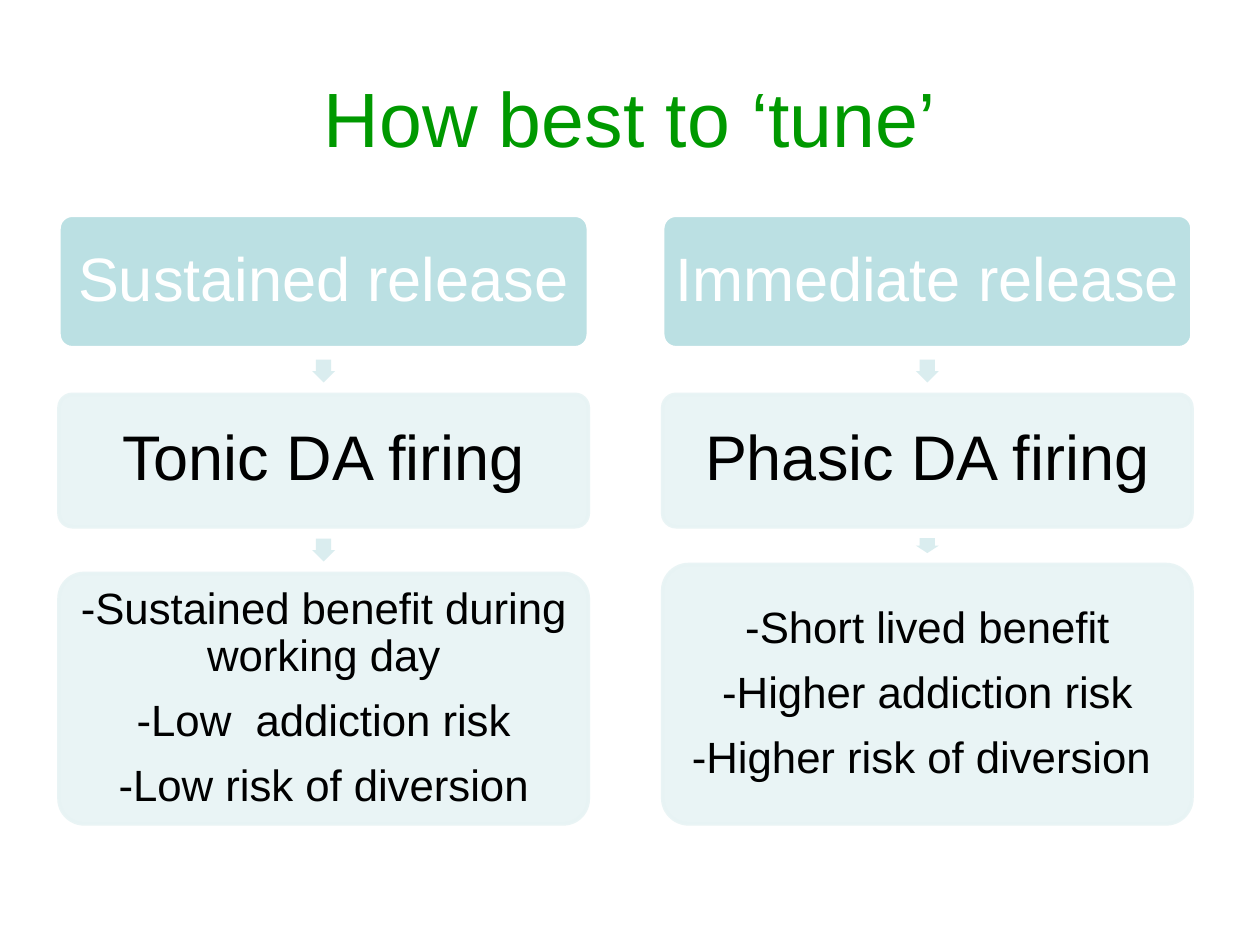
from lxml.etree import SubElement
from pptx import Presentation
from pptx.dml.color import RGBColor
from pptx.enum.shapes import MSO_SHAPE
from pptx.enum.text import MSO_ANCHOR, PP_ALIGN
from pptx.oxml.ns import qn
from pptx.util import Cm, Pt

# Content: each column holds its left edge and its boxes from top to bottom
TITLE = "How best to ‘tune’"
COLS = [
    (1.19, [["Sustained release"], ["Tonic DA firing"],
            ["-Sustained benefit during working day", "-Low  addiction risk",
             "-Low risk of diversion"]]),
    (13.36, [["Immediate release"], ["Phasic DA firing"],
             ["-Short lived benefit", "-Higher addiction risk",
              "-Higher risk of diversion "]]),
]
# Per row: fill, line, opacity, text colour, text size, inset
ROWS = [
    ("BBE0E3", "FFFFFF", 100, "FFFFFF", 35, 0.13),
    ("E7F3F4", "E7F3F4", 90, "000000", 36, 0.13),
    ("E7F3F4", "E7F3F4", 90, "000000", 25, 0.08),
]
# Per column: top of each box, height of each arrow
TOPS = [(4.34, 7.95, 11.56), (4.34, 7.95, 11.38)]
TIPS = [(0.46, 0.46), (0.46, 0.3)]
WIDE, HIGH, BASE, TIP = 10.67, 2.67, 16.61, 0.46


def tint(paint, code, alpha=100):
    paint.solid()
    paint.fore_color.rgb = RGBColor.from_string(code)
    if alpha < 100:
        node = paint._xPr.find(qn("a:solidFill"))[0]
        SubElement(node, qn("a:alpha")).set("val", str(alpha * 1000))


def write(shape, lines, size, color, inset=0.25, space=1, after=0):
    frame = shape.text_frame
    frame.word_wrap = True
    frame.vertical_anchor = MSO_ANCHOR.MIDDLE
    frame.margin_left = frame.margin_right = Cm(inset)
    frame.margin_top = frame.margin_bottom = Cm(min(inset, 0.13))
    for i, line in enumerate(lines):
        para = frame.add_paragraph() if i else frame.paragraphs[0]
        para.text = line
        para.alignment = PP_ALIGN.CENTER
        para.line_spacing = space
        para.space_after = Pt(after)
        para.font.name = "Arial"
        para.font.size = Pt(size)
        para.font.color.rgb = RGBColor.from_string(color)


def draw(kind, x, y, w, h, fill, alpha=100, line=None, adj=()):
    shape = slide.shapes.add_shape(kind, Cm(x), Cm(y), Cm(w), Cm(h))
    shape.shadow.inherit = False
    for i, val in enumerate(adj):
        shape.adjustments[i] = val
    tint(shape.fill, fill, alpha)
    if line:
        tint(shape.line.fill, line, alpha)
        shape.line.width = Pt(2)
    else:
        shape.line.fill.background()
    return shape


deck = Presentation()
deck.slide_width, deck.slide_height = Cm(25.4), Cm(19.05)
slide = deck.slides.add_slide(deck.slide_layouts[6])

# Title
head = slide.shapes.add_textbox(Cm(1.27), Cm(0.76), Cm(22.86), Cm(3.18))
write(head, [TITLE], 44, "009900")

# Columns of boxes, with an arrow centred in each gap
for (left, boxes), tops, tips in zip(COLS, TOPS, TIPS):
    for i, (lines, look) in enumerate(zip(boxes, ROWS)):
        fill, edge, alpha, color, size, inset = look
        top = tops[i]
        high = HIGH if i < 2 else BASE - top
        box = draw(MSO_SHAPE.ROUNDED_RECTANGLE, left, top, WIDE, high,
                   fill, alpha, edge, [0.1])
        write(box, lines, size, color, inset, 0.9, size * 0.4)
        if i < 2:
            mid = (top + high + tops[i + 1]) / 2
            draw(MSO_SHAPE.DOWN_ARROW, left + (WIDE - TIP) / 2,
                 mid - tips[i] / 2, TIP, tips[i], "DAEDEF", adj=[0.667, 0.5])

deck.save("out.pptx")
